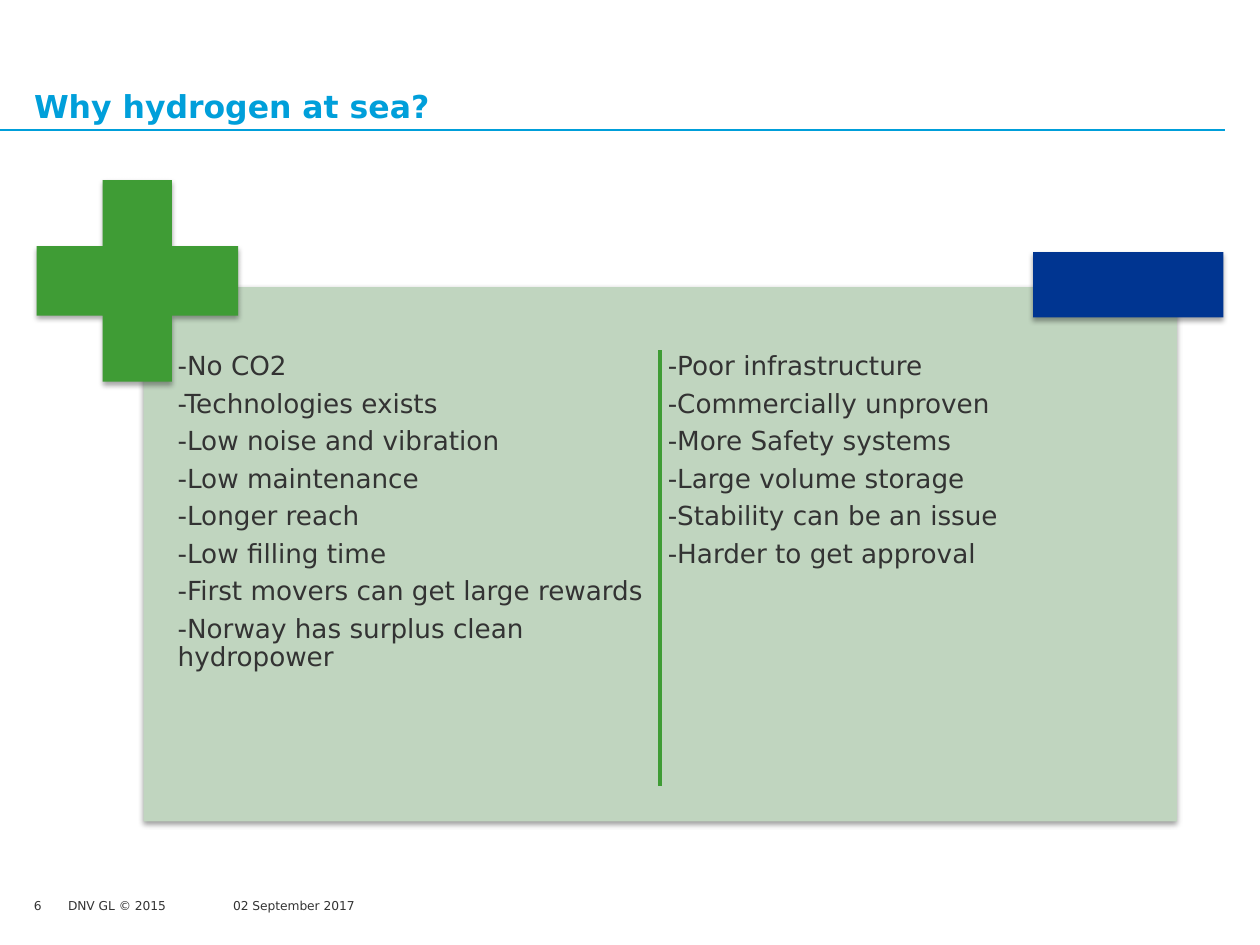
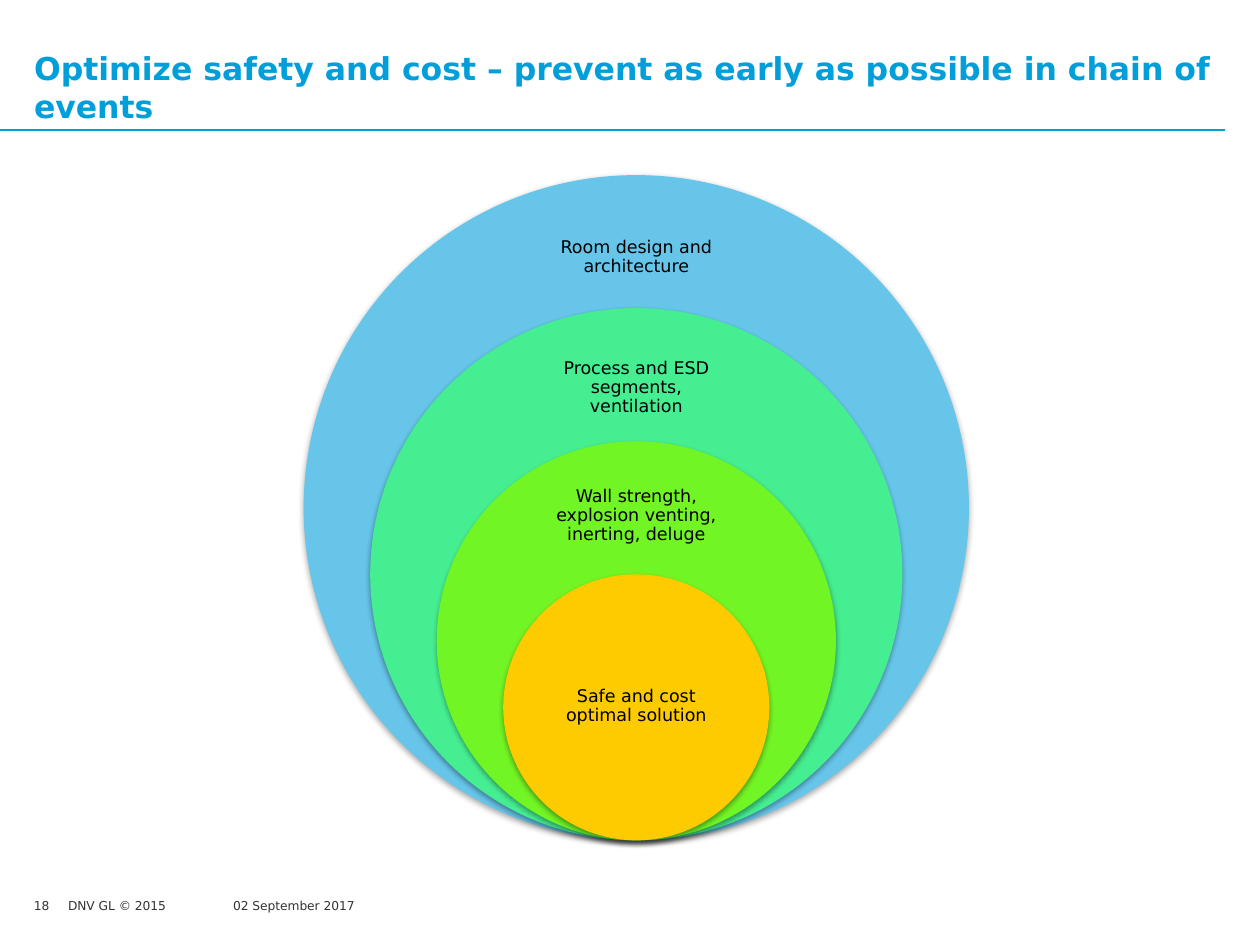
from lxml import etree
from pptx import Presentation
from pptx.dml.color import RGBColor
from pptx.enum.shapes import MSO_CONNECTOR, MSO_SHAPE
from pptx.enum.text import MSO_ANCHOR, PP_ALIGN
from pptx.oxml.ns import qn
from pptx.util import Inches, Pt

FONT = "DejaVu Sans"
SKY, GREEN, NAVY, PALE_GREEN = "009FDA", "3F9C35", "003591", "C0D5BF"
DARK, BLACK = "333333", "000000"

TITLE = {"size": 18, "bold": True, "color": SKY, "anchor": MSO_ANCHOR.BOTTOM}
FOOTER = {"size": 7}
LIST = {"size": 15, "inset": 0.03, "line_spacing": 0.9, "space_after": Pt(5.25)}
LABEL = {"size": 10, "color": BLACK, "inset": 0.08, "line_spacing": 0.9,
         "anchor": MSO_ANCHOR.MIDDLE, "alignment": PP_ALIGN.CENTER}


def color(value):
    return RGBColor.from_string(value)


class Deck:
    """Holds the presentation, its shared style and the current slide."""

    def __init__(self):
        self.presentation = Presentation()
        self.presentation.slide_width = Inches(10)
        self.presentation.slide_height = Inches(7.5)
        self.slide = None

    def add_slide(self, title, number):
        self.slide = self.presentation.slides.add_slide(
            self.presentation.slide_layouts[6])
        # Title and its rule
        self.line((0, 1.03), (9.72, 1.03), SKY, 1)
        self.text((0.27, 0.26, 9.45, 0.73), [title], TITLE)
        # Footer
        self.text((0.27, 7.13, 0.26, 0.2), [number], FOOTER)
        self.text((0.54, 7.13, 0.8, 0.12), ["DNV GL © 2015"], FOOTER, wrap=False)
        self.text((1.85, 7.13, 3.07, 0.2), ["02 September 2017"], FOOTER)

    def text(self, box, lines, style, wrap=True):
        frame = self.slide.shapes.add_textbox(*map(Inches, box)).text_frame
        frame.word_wrap = wrap
        frame.vertical_anchor = style.get("anchor", MSO_ANCHOR.TOP)
        for side in ("left", "top", "right", "bottom"):
            setattr(frame, f"margin_{side}", Inches(style.get("inset", 0)))
        for index, line in enumerate(lines):
            paragraph = frame.add_paragraph() if index else frame.paragraphs[0]
            for name in ("alignment", "line_spacing", "space_after"):
                if name in style:
                    setattr(paragraph, name, style[name])
            run = paragraph.add_run()
            run.text = line
            font_values = {"name": FONT, "size": Pt(style["size"]),
                           "bold": style.get("bold", False)}
            for name, value in font_values.items():
                setattr(run.font, name, value)
            run.font.color.rgb = color(style.get("color", DARK))

    def shape(self, kind, box, fill, opacity=35, distance=1.8):
        shape = self.slide.shapes.add_shape(kind, *map(Inches, box))
        shape.fill.solid()
        shape.fill.fore_color.rgb = color(fill)
        shape.line.fill.background()
        # Soft shadow straight below the shape
        shape.shadow.inherit = False
        effects = shape._element.spPr.find(qn("a:effectLst"))
        shadow = etree.SubElement(
            effects, qn("a:outerShdw"), blurRad=str(Pt(3.1)),
            dist=str(Pt(distance)), dir="5400000", rotWithShape="0")
        tint = etree.SubElement(shadow, qn("a:srgbClr"), val=BLACK)
        etree.SubElement(tint, qn("a:alpha"), val=str(opacity * 1000))
        return shape

    def line(self, start, end, stroke, width):
        connector = self.slide.shapes.add_connector(
            MSO_CONNECTOR.STRAIGHT, *map(Inches, start + end))
        connector.line.color.rgb = color(stroke)
        connector.line.width = Pt(width)
        etree.SubElement(connector._element.spPr, qn("a:effectLst"))


def add_pros_and_cons(deck):
    deck.add_slide("Why hydrogen at sea?", "6")
    deck.shape(MSO_SHAPE.RECTANGLE, (1.14, 2.28, 8.2, 4.24), PALE_GREEN,
               opacity=38, distance=1.6)

    # Argument columns
    pros = ["-No CO2", "-Technologies exists", "-Low noise and vibration",
            "-Low maintenance", "-Longer reach", "-Low filling time",
            "-First movers can get large rewards",
            "-Norway has surplus clean hydropower"]
    cons = ["-Poor infrastructure", "-Commercially unproven",
            "-More Safety systems", "-Large volume storage",
            "-Stability can be an issue", "-Harder to get approval"]
    for left, arguments in ((1.38, pros), (5.27, cons)):
        deck.text((left, 2.77, 3.81, 3.62), arguments, LIST)

    # Plus and minus signs, divider
    plus = deck.shape(MSO_SHAPE.CROSS, (0.29, 1.43, 1.6, 1.6), GREEN)
    plus.adjustments[0] = 0.328
    deck.shape(MSO_SHAPE.RECTANGLE, (8.2, 2, 1.51, 0.52), NAVY)
    deck.line((5.24, 2.78), (5.24, 6.24), GREEN, 2)


def add_safety_circles(deck):
    deck.add_slide("Optimize safety and cost – prevent as early as possible "
                   "in chain of events", "18")
    center, bottom, largest = 5.05, 6.67, 5.28
    label_width = 1.48
    # Fill, label, label top and label height, from the outer circle inwards
    layers = [
        ("66C5E9", "Room design and architecture", 1.65, 0.79),
        ("46EE92", "Process and ESD segments, ventilation", 2.7, 0.76),
        ("72F524", "Wall strength, explosion venting, inerting, deluge", 3.74, 0.71),
        ("FECB00", "Safe and cost optimal solution", 5.08, 1.06),
    ]
    for index, (fill, label, label_top, label_height) in enumerate(layers):
        diameter = largest * (1 - 0.2 * index)
        deck.shape(MSO_SHAPE.OVAL, (center - diameter / 2, bottom - diameter,
                                    diameter, diameter), fill)
        deck.text((center - label_width / 2, label_top, label_width, label_height),
                  [label], LABEL)


def main():
    deck = Deck()
    add_pros_and_cons(deck)
    add_safety_circles(deck)
    deck.presentation.save("out.pptx")


if __name__ == "__main__":
    main()
